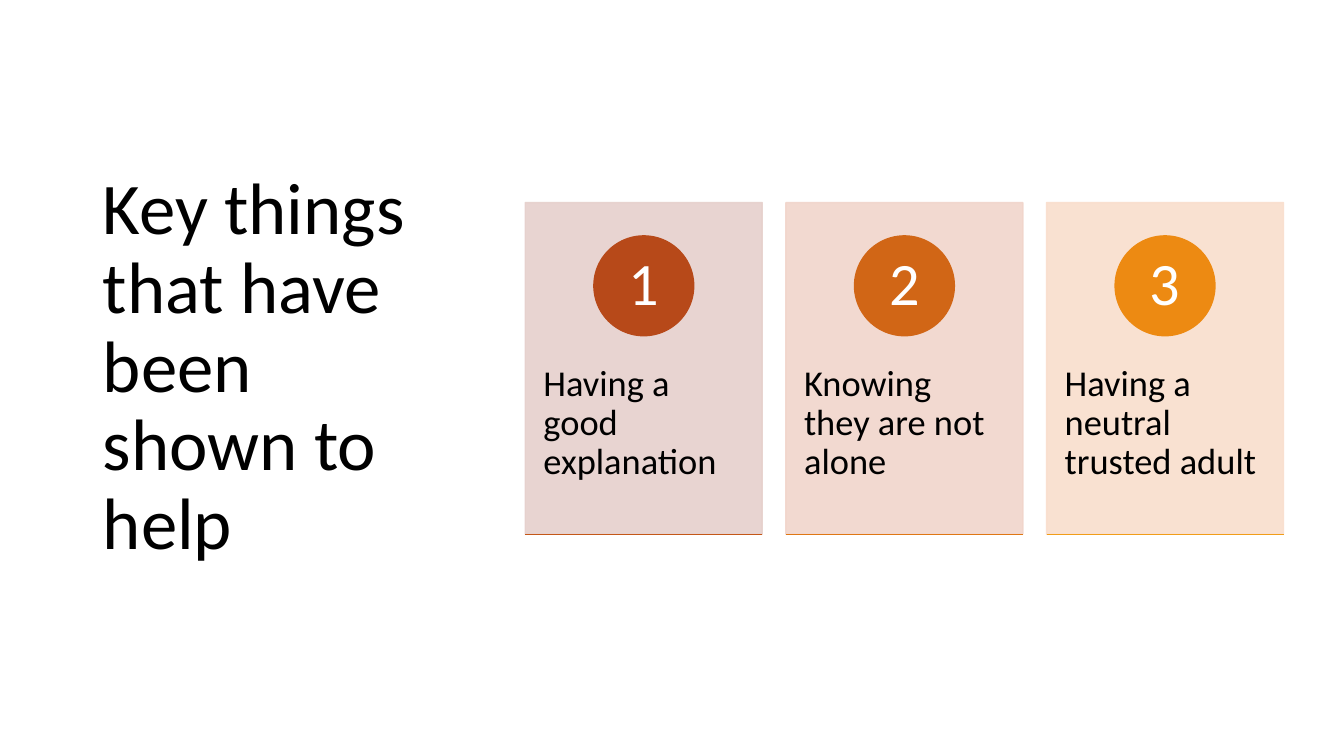
from lxml import etree
from pptx import Presentation
from pptx.dml.color import RGBColor
from pptx.enum import shapes, text
from pptx.oxml import ns
from pptx.util import Inches, Pt

TITLE = "Key things that have been shown to help"
BLACK = RGBColor(0x00, 0x00, 0x00)
WHITE = RGBColor(0xFF, 0xFF, 0xFF)
CARDS = [
    ("Having a good explanation", RGBColor(0xE6, 0xD0, 0xCC),
     RGBColor(0xB7, 0x49, 0x19), RGBColor(0xC4, 0x57, 0x18)),
    ("Knowing they are not alone", RGBColor(0xF1, 0xD5, 0xCB),
     RGBColor(0xD1, 0x66, 0x16), RGBColor(0xDF, 0x77, 0x14)),
    ("Having a neutral trusted adult", RGBColor(0xF9, 0xDE, 0xCD),
     RGBColor(0xED, 0x8A, 0x12), RGBColor(0xF1, 0x9D, 0x19)),
]
FONT = "Calibri"
CARD_LEFT, CARD_TOP, CARD_WIDTH, CARD_HEIGHT = 5.21, 2.01, 2.35, 3.29
CARD_STEP = 2.585
CIRCLE_TOP, CIRCLE_SIZE = 2.34, 0.99
NUMBER_SIZE = 0.7
LABEL_TOP, LABEL_HEIGHT = 3.26, 1.97


def write(shape, words, size, color, align, anchor, insets):
    """Put one formatted paragraph into a shape."""
    frame = shape.text_frame
    frame.word_wrap = True
    frame.auto_size = text.MSO_AUTO_SIZE.NONE
    frame.vertical_anchor = anchor
    frame.margin_left = frame.margin_right = Inches(insets[0])
    frame.margin_top = frame.margin_bottom = Inches(insets[1])
    paragraph = frame.paragraphs[0]
    paragraph.alignment = align
    paragraph.line_spacing = 0.9
    run = paragraph.add_run()
    run.text = words
    run.font.name = FONT
    run.font.size = Pt(size)
    run.font.color.rgb = color


def add_filled(group, kind, box, color, opacity=100):
    """Add a preset shape with fill and outline in one colour."""
    shape = group.shapes.add_shape(kind, *map(Inches, box))
    shape.shadow.inherit = False
    shape.fill.solid()
    shape.fill.fore_color.rgb = color
    shape.line.color.rgb = color
    shape.line.width = Pt(1)
    if opacity < 100:
        for tone in shape._element.spPr.iter(ns.qn("a:srgbClr")):
            etree.SubElement(tone, ns.qn("a:alpha"), val=str(opacity * 1000))


def add_card(slide, index, label, card_color, circle_color, rule_color):
    """Draw a card with its numbered circle, label and bottom rule."""
    group = slide.shapes.add_group_shape()
    left = CARD_LEFT + index * CARD_STEP
    center = left + CARD_WIDTH / 2
    add_filled(group, shapes.MSO_SHAPE.RECTANGLE,
               (left, CARD_TOP, CARD_WIDTH, CARD_HEIGHT), card_color, 90)
    label_box = group.shapes.add_textbox(
        *map(Inches, (left, LABEL_TOP, CARD_WIDTH, LABEL_HEIGHT)))
    write(label_box, label, 26, BLACK, text.PP_ALIGN.LEFT,
          text.MSO_ANCHOR.TOP, (0.18, 0.36))
    add_filled(group, shapes.MSO_SHAPE.OVAL,
               (center - CIRCLE_SIZE / 2, CIRCLE_TOP, CIRCLE_SIZE, CIRCLE_SIZE),
               circle_color)
    number_top = CIRCLE_TOP + (CIRCLE_SIZE - NUMBER_SIZE) / 2
    number_box = group.shapes.add_textbox(*map(Inches, (
        center - NUMBER_SIZE / 2, number_top, NUMBER_SIZE, NUMBER_SIZE)))
    write(number_box, str(index + 1), 43, WHITE, text.PP_ALIGN.CENTER,
          text.MSO_ANCHOR.MIDDLE, (0.08, 0.01))
    bottom = CARD_TOP + CARD_HEIGHT
    rule = group.shapes.add_connector(
        shapes.MSO_CONNECTOR.STRAIGHT,
        *map(Inches, (left, bottom, left + CARD_WIDTH, bottom)))
    rule.line.color.rgb = rule_color
    rule.line.width = Pt(1)
    etree.SubElement(rule._element.spPr, ns.qn("a:effectLst"))


def main():
    """Build the slide and save it."""
    presentation = Presentation()
    presentation.slide_width = Inches(13.33)
    presentation.slide_height = Inches(7.5)
    slide = presentation.slides.add_slide(presentation.slide_layouts[5])
    slide.background.fill.solid()
    slide.background.fill.fore_color.rgb = WHITE
    title = slide.shapes.title
    title.left, title.top = Inches(0.92), Inches(0.61)
    title.width, title.height = Inches(3.69), Inches(6.09)
    write(title, TITLE, 52, BLACK, text.PP_ALIGN.LEFT,
          text.MSO_ANCHOR.MIDDLE, (0.1, 0.05))
    for index, card in enumerate(CARDS):
        add_card(slide, index, *card)
    presentation.save("out.pptx")


if __name__ == "__main__":
    main()
